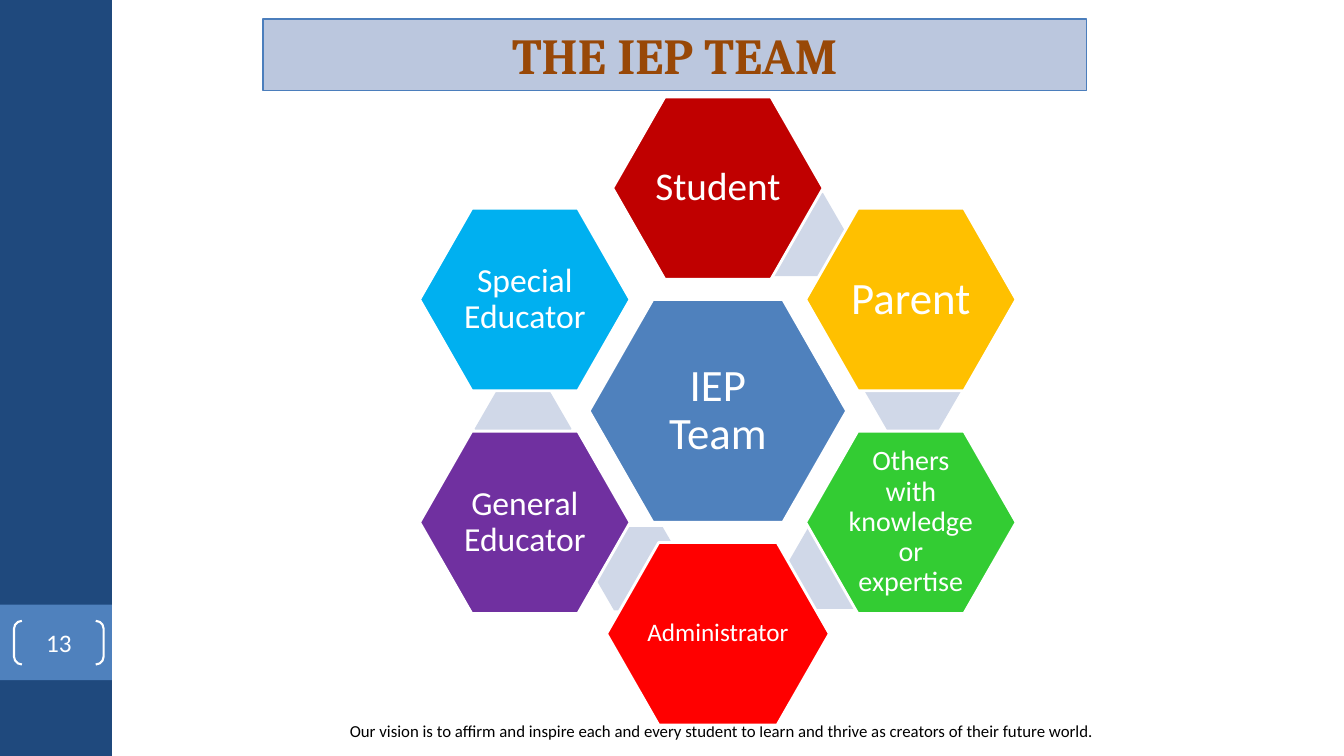
import math

import pptx
import pptx.util
import pptx.dml.color
import pptx.enum.shapes
import pptx.enum.text

Pt = pptx.util.Pt
RGB = pptx.dml.color.RGBColor.from_string
SHAPE = pptx.enum.shapes.MSO_SHAPE
ANCHOR = pptx.enum.text.MSO_ANCHOR
CENTER = pptx.enum.text.PP_ALIGN.CENTER

THEME = {
    "navy": "1F497D", "blue": "4F81BD", "link": "D0D8E8", "white": "FFFFFF", "black": "000000",
    "title_fill": "BBC7DE", "title_line": "4B7EBC", "title_text": "984807",
    "student": "C00000", "parent": "FFC000", "others": "33CC33",
    "admin": "FF0000", "general": "7030A0", "special": "00B0F0",
    "heading": "Cambria", "body": "Calibri",
    "title_pt": 36, "xl": 32, "large": 28, "medium": 24, "small": 20, "label": 18, "footer": 12,
}

prs = pptx.Presentation()
prs.slide_width = pptx.util.Inches(13.33)
prs.slide_height = pptx.util.Inches(7.5)
s = prs.slides.add_slide(prs.slide_layouts[6])
COL = prs.slide_width / 120  # square grid: 120 columns, 67.5 rows
ROWS = prs.slide_height / COL


def add_box(kind, left, top, width, height, fill=None, line=None, line_pt=1):
    """Add a preset shape, or a text box when kind is None; lengths are in grid cells."""
    box = [round(v * COL) for v in (left, top, width, height)]
    if kind is None:
        return s.shapes.add_textbox(*box)
    sp = s.shapes.add_shape(kind, *box)
    sp.shadow.inherit = False
    if fill:
        sp.fill.solid()
        sp.fill.fore_color.rgb = RGB(THEME[fill])
    else:
        sp.fill.background()
    if line:
        sp.line.color.rgb = RGB(THEME[line])
        sp.line.width = Pt(line_pt)
    else:
        sp.line.fill.background()
    return sp


def write(sp, text, size, color="white", font="body", bold=False, anchor=ANCHOR.MIDDLE, inset=None, spacing=None):
    tf = sp.text_frame
    tf.text = text
    tf.word_wrap = True
    tf.vertical_anchor = anchor
    if inset is not None:
        tf.margin_left = tf.margin_right = tf.margin_top = tf.margin_bottom = Pt(inset)
    p = tf.paragraphs[0]
    p.alignment = CENTER
    p.line_spacing = spacing
    r = p.runs[0]
    r.font.name, r.font.size, r.font.bold = THEME[font], Pt(THEME[size]), bold
    r.font.color.rgb = RGB(THEME[color])


# Sidebar, footer and title
add_box(SHAPE.RECTANGLE, 0, 0, 10, ROWS, "navy")
add_box(SHAPE.RECTANGLE, 0, 54, 10, 6.75, "blue")
footer = add_box(None, 9.2, 63.9, 110.5, 4.3)
write(footer, "Our vision is to affirm and inspire each and every student to learn and thrive "
      "as creators of their future world.", "footer", "black", anchor=ANCHOR.TOP)
title = add_box(SHAPE.RECTANGLE, 23.5, 1.7, 73.5, 6.4, "title_fill", "title_line")
write(title, "THE IEP TEAM", "title_pt", "title_text", "heading", True, ANCHOR.TOP)
number = add_box(SHAPE.DOUBLE_BRACKET, 1.25, 55.45, 8, 3.9, line="white", line_pt=1.5)
number.adjustments[0] = 0.18
write(number, "13", "label", inset=0)

# Hub, then the ring of members clockwise from the top
HUB_X, HUB_Y, RADIUS = 64.1, 36.7, 19.9
MEMBER_W, MEMBER_H, LINK_W, LINK_H = 18.8, 16.3, 8.65, 7.45
hub = add_box(SHAPE.HEXAGON, HUB_X - 11.5, HUB_Y - 9.95, 23, 19.9, "blue", "white", 2)
hub.adjustments[0] = 0.286
write(hub, "IEP Team", "xl", inset=3, spacing=0.9)

# Text, fill, type size, extra width, offset from the hub of the link behind
members = [
    ("Student", "student", "large", 0, (7.2, -15.75)),
    ("Parent", "parent", "xl", 0, (17.4, -1.8)),
    ("Others with knowledge or expertise", "others", "small", 0, (10.35, 13.95)),
    ("Administrator", "admin", "label", 1.1, (-7.1, 14.1)),
    ("General Educator", "general", "medium", 0, (-17.4, 1.6)),
    ("Special Educator", "special", "medium", 0, None),
]
for i, (text, fill, size, extra, link) in enumerate(members):
    if link:
        joint = add_box(SHAPE.HEXAGON, HUB_X + link[0] - LINK_W / 2, HUB_Y + link[1] - LINK_H / 2,
                        LINK_W, LINK_H, "link")
        joint.adjustments[0] = 0.289
    angle = math.radians(60 * i)
    x = HUB_X + RADIUS * math.sin(angle)
    y = HUB_Y - RADIUS * math.cos(angle)
    width = MEMBER_W + extra
    member = add_box(SHAPE.HEXAGON, x - width / 2, y - MEMBER_H / 2, width, MEMBER_H, fill, "white", 2)
    member.adjustments[0] = 0.286
    write(member, text, size, inset=2.4, spacing=0.9)

prs.save("out.pptx")
